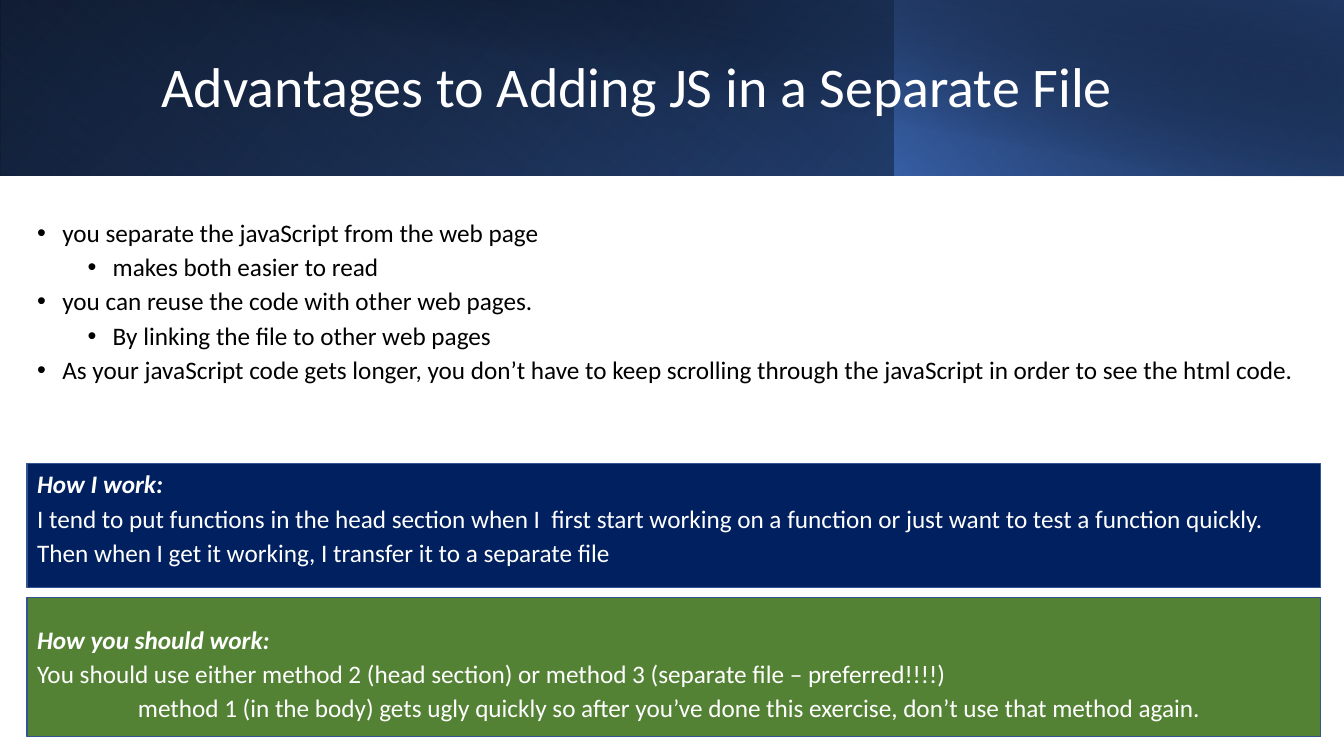
from dataclasses import dataclass

from lxml.etree import SubElement
from pptx import Presentation
from pptx.dml.color import RGBColor
from pptx.enum.shapes import MSO_SHAPE as Shape
from pptx.enum.text import MSO_ANCHOR as Anchor, MSO_AUTO_SIZE as AutoSize, PP_ALIGN as Align
from pptx.oxml.ns import qn
from pptx.util import Inches, Pt


@dataclass(frozen=True)
class Theme:
    font: str = "Calibri"
    title_size: int = 40
    body_size: int = 18
    light: str = "FFFFFF"
    dark: str = "000000"
    navy: str = "002060"
    green: str = "548235"
    outline: str = "325491"
    accent: str = "4472C4"
    accent_shade: str = "2F5597"
    accent_deep: str = "203864"


THEME = Theme()


@dataclass(frozen=True)
class Box:
    left: float
    top: float
    width: float
    height: float

    def lengths(self) -> tuple:
        return tuple(Inches(v) for v in (self.left, self.top, self.width, self.height))


@dataclass(frozen=True)
class Stop:
    position: int
    color: str
    opacity: int = 100


@dataclass(frozen=True)
class Band:
    box: Box
    stops: tuple[Stop, ...]
    angle: int
    flipped: bool = True
    rotation: int = 0


@dataclass(frozen=True)
class Panel:
    box: Box
    color: str


@dataclass(frozen=True)
class Line:
    text: str
    color: str = THEME.light
    indent: float = 0
    bullet: bool = False
    heading: bool = False
    space_before: float = 0


def point(text: str, level: int = 0) -> Line:
    return Line(text, THEME.dark, 0.25 + 0.5 * level, bullet=True)


# Content
TITLE = "Advantages to Adding JS in a Separate File"
TITLE_BOX = Box(1.5, 0.32, 10.82, 1.13)
BODY_BOX = Box(0.27, 2.14, 12.83, 5.36)

BANDS = (
    Band(Box(0, 0, 13.33, 1.74),
         (Stop(0, THEME.dark), Stop(100, THEME.accent_shade)), 140),
    Band(Box(0, 0, 8.88, 1.74),
         (Stop(20, THEME.accent, 0), Stop(100, THEME.accent_deep, 55)), 230, rotation=180),
    Band(Box(8.87, 0, 4.46, 1.74),
         (Stop(0, THEME.accent, 66), Stop(100, THEME.dark, 30)), 220),
    Band(Box(0.5, 0, 12.83, 1.75),
         (Stop(50, THEME.dark, 0), Stop(99, THEME.accent_deep, 52)), 280, flipped=False),
)

PANELS = (
    Panel(Box(0.27, 4.6, 12.83, 1.23), THEME.navy),
    Panel(Box(0.27, 5.93, 12.83, 1.38), THEME.green),
)

BODY = (
    point("you separate the javaScript from the web page"),
    point("makes both easier to read", 1),
    point("you can reuse the code with other web pages."),
    point("By linking the file to other web pages", 1),
    point("As your javaScript code gets longer, you don’t have to keep scrolling "
          "through the javaScript in order to see the html code."),
    Line("How I work:", heading=True, space_before=57.5),
    Line("I tend to put functions in the head section when I  first start working "
         "on a function or just want to test a function quickly."),
    Line("Then when I get it working, I transfer it to a separate file"),
    Line("How you should work:", heading=True, space_before=37.5),
    Line("You should use either method 2 (head section) or method 3 "
         "(separate file – preferred!!!!)"),
    Line("method 1 (in the body) gets ugly quickly so after you’ve done this exercise, "
         "don’t use that method again.", indent=1),
)


def add_rectangle(slide, box: Box):
    rectangle = slide.shapes.add_shape(Shape.RECTANGLE, *box.lengths())
    rectangle.shadow.inherit = False
    return rectangle


def add_band(slide, band: Band) -> None:
    rectangle = add_rectangle(slide, band.box)
    rectangle.rotation = band.rotation
    rectangle.line.fill.background()
    rectangle.fill.gradient()
    properties = rectangle._element.spPr
    if band.flipped:
        properties.find(qn("a:xfrm")).set("flipH", "1")
    # Gradient stops with transparency
    gradient = properties.find(qn("a:gradFill"))
    for child in list(gradient):
        gradient.remove(child)
    stop_list = SubElement(gradient, qn("a:gsLst"))
    for stop in band.stops:
        entry = SubElement(stop_list, qn("a:gs"), pos=str(stop.position * 1000))
        color = SubElement(entry, qn("a:srgbClr"), val=stop.color)
        if stop.opacity < 100:
            SubElement(color, qn("a:alpha"), val=str(stop.opacity * 1000))
    SubElement(gradient, qn("a:lin"), ang=str(band.angle * 60000), scaled="0")


def add_panel(slide, panel: Panel) -> None:
    rectangle = add_rectangle(slide, panel.box)
    rectangle.fill.solid()
    rectangle.fill.fore_color.rgb = RGBColor.from_string(panel.color)
    rectangle.line.color.rgb = RGBColor.from_string(THEME.outline)
    rectangle.line.width = Pt(1)


def add_run(paragraph, text: str, size: int, color: str, heading: bool = False) -> None:
    run = paragraph.add_run()
    run.text = text
    run.font.name = THEME.font
    run.font.size = Pt(size)
    run.font.bold = run.font.italic = heading
    run.font.color.rgb = RGBColor.from_string(color)


def place_title(slide) -> None:
    title = slide.shapes.title
    title.left, title.top, title.width, title.height = TITLE_BOX.lengths()
    slide.shapes._spTree.append(title._element)  # bring above the bands
    frame = title.text_frame
    frame.auto_size = AutoSize.NONE
    frame.vertical_anchor = Anchor.MIDDLE
    paragraph = frame.paragraphs[0]
    paragraph.alignment = Align.LEFT
    paragraph.line_spacing = 0.9
    add_run(paragraph, TITLE, THEME.title_size, THEME.light)


def add_body(slide) -> None:
    frame = slide.shapes.add_textbox(*BODY_BOX.lengths()).text_frame
    frame.word_wrap = True
    frame.vertical_anchor = Anchor.TOP
    for index, line in enumerate(BODY):
        paragraph = frame.add_paragraph() if index else frame.paragraphs[0]
        paragraph.line_spacing = 0.9
        paragraph.space_before = Pt(line.space_before)
        paragraph.space_after = Pt(5)
        properties = paragraph._p.get_or_add_pPr()
        properties.set("marL", str(Inches(line.indent)))
        if line.bullet:
            properties.set("indent", str(Inches(-0.25)))
            SubElement(properties, qn("a:buFont"), typeface="Arial")
            SubElement(properties, qn("a:buChar"), char="•")
        add_run(paragraph, line.text, THEME.body_size, line.color, line.heading)


def main() -> None:
    deck = Presentation()
    deck.slide_width, deck.slide_height = Inches(13.33), Inches(7.5)
    slide = deck.slides.add_slide(deck.slide_layouts[5])
    for band in BANDS:
        add_band(slide, band)
    place_title(slide)
    for panel in PANELS:
        add_panel(slide, panel)
    add_body(slide)
    deck.save("out.pptx")


if __name__ == "__main__":
    main()
